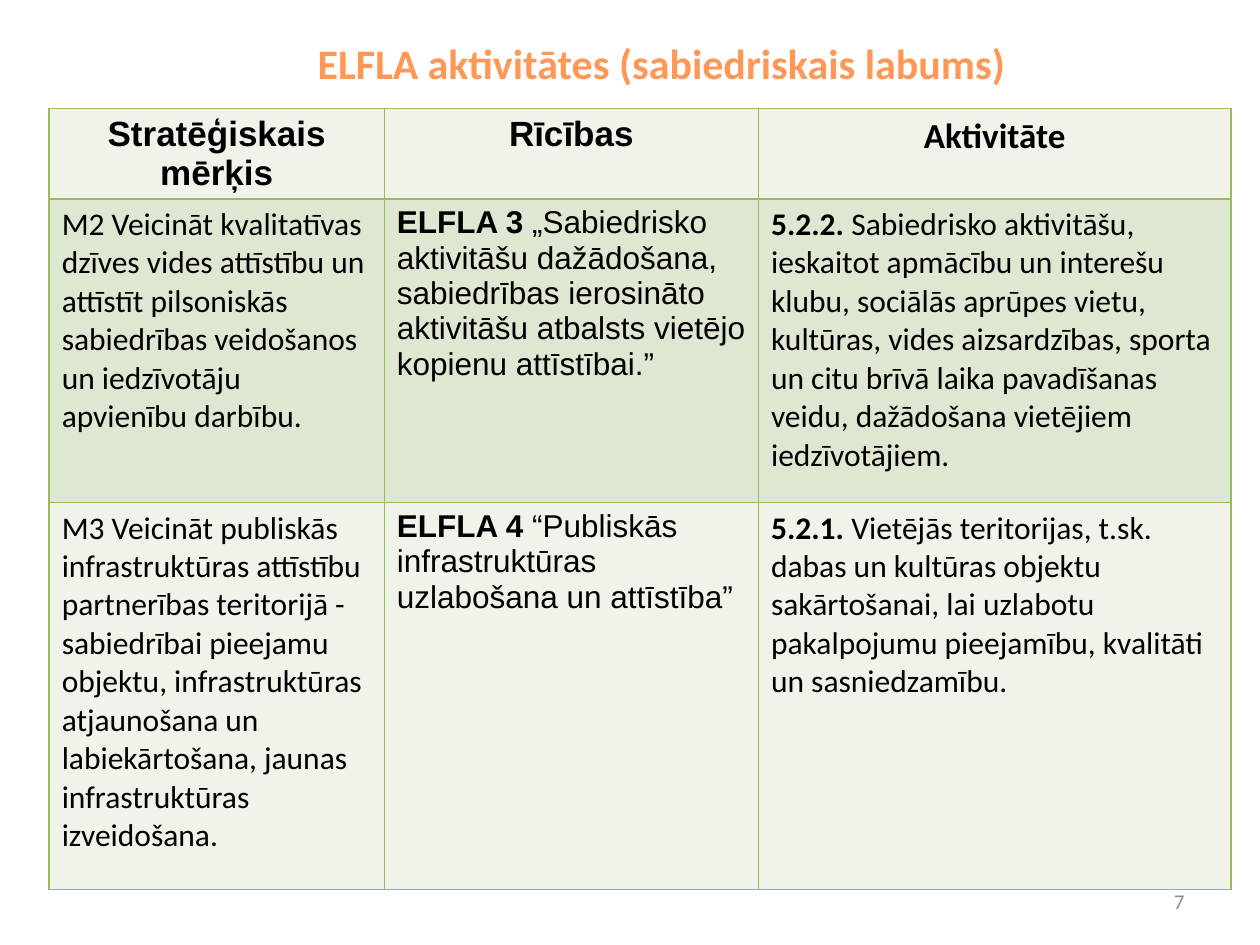
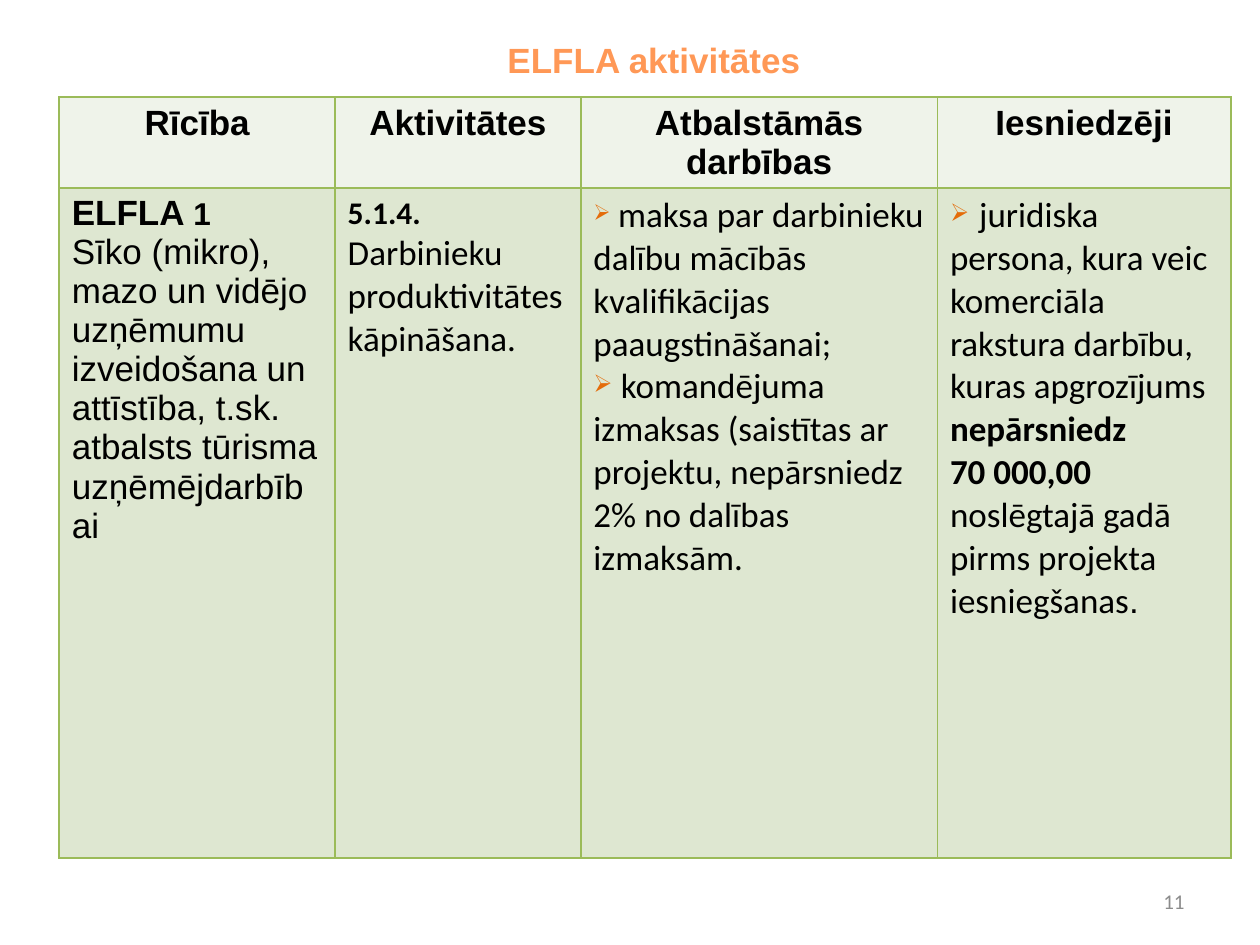
from lxml import etree
from pptx import Presentation
from pptx.dml.color import RGBColor
from pptx.enum.text import MSO_ANCHOR, PP_ALIGN
from pptx.oxml.ns import qn
from pptx.util import Inches, Pt

CENTER, RIGHT, MIDDLE = PP_ALIGN.CENTER, PP_ALIGN.RIGHT, MSO_ANCHOR.MIDDLE
ORANGE = RGBColor(0xFF, 0x98, 0x56)
BULLET = RGBColor(0xE4, 0x6C, 0x0A)
GREEN = RGBColor(0x9B, 0xBB, 0x59)
PALE = RGBColor(0xEF, 0xF3, 0xEA)
SAGE = RGBColor(0xDE, 0xE7, 0xD1)
BLACK = RGBColor(0, 0, 0)
GREY = RGBColor(0x8C, 0x8C, 0x8C)
A, C = "Arial", "Calibri"
TITLE_ONLY = 5

prs = Presentation()
prs.slide_width, prs.slide_height = Inches(10), Inches(7.5)
PX, PY = prs.slide_width / 100, prs.slide_height / 100  # one percent of the slide


def add_run(p, text, size, font, bold=False, color=BLACK):
    r = p.add_run()
    r.text = text
    r.font.size, r.font.name, r.font.bold = Pt(size), font, bold
    r.font.color.rgb = color


def add_bullet(p):
    """Put an orange arrow in front of the paragraph, without a hanging indent."""
    pPr = p._p.get_or_add_pPr()
    pPr.set("marL", "0")
    pPr.set("indent", "0")
    clr = etree.SubElement(pPr, qn("a:buClr"))
    etree.SubElement(clr, qn("a:srgbClr"), val=str(BULLET))
    etree.SubElement(pPr, qn("a:buSzPct"), val="70000")
    etree.SubElement(pPr, qn("a:buChar"), char="➢")


# Boxes, columns and rows are in percent of the slide.
# A cell is a list of paragraphs, a paragraph a list of runs (text, size, font, bold);
# a paragraph that starts with "➢" is bulleted.
slides = [
    {
        "title": ("ELFLA aktivitātes (sabiedriskais labums)", 24, C),
        "title_box": (10, 4, 85, 5.33),
        "number": "7",
        "corner": (3.9, 11.47),
        "cols": [26.6, 29.7, 37.5],
        "rows": [7.2, 32.13, 40.93],
        "header": [("Stratēģiskais mērķis", A), ("Rīcības", A), ("Aktivitāte", C)],
        "body": [
            [
                [[("M2 Veicināt kvalitatīvas dzīves vides attīstību un attīstīt pilsoniskās "
                   "sabiedrības veidošanos un iedzīvotāju apvienību darbību.", 18, C)]],
                [[("ELFLA 3 ", 18, A, True),
                  ("„Sabiedrisko aktivitāšu dažādošana, sabiedrības ierosināto aktivitāšu "
                   "atbalsts vietējo kopienu attīstībai.”", 18, A)]],
                [[("5.2.2. ", 18, C, True),
                  ("Sabiedrisko aktivitāšu, ieskaitot apmācību un interešu klubu, sociālās "
                   "aprūpes vietu, kultūras, vides aizsardzības, sporta un citu brīvā laika "
                   "pavadīšanas veidu, dažādošana vietējiem iedzīvotājiem.", 18, C)]],
            ],
            [
                [[("M3 Veicināt publiskās infrastruktūras attīstību partnerības teritorijā - "
                   "sabiedrībai pieejamu objektu, infrastruktūras atjaunošana un "
                   "labiekārtošana, jaunas infrastruktūras izveidošana.", 18, C)]],
                [[("ELFLA 4 ", 18, A, True),
                  ("“Publiskās infrastruktūras uzlabošana un attīstība”", 18, A)]],
                [[("5.2.1. ", 18, C, True),
                  ("Vietējās teritorijas, t.sk. dabas un kultūras objektu sakārtošanai, lai "
                   "uzlabotu pakalpojumu pieejamību, kvalitāti un sasniedzamību.", 18, C)]],
            ],
        ],
    },
    {
        "title": ("ELFLA aktivitātes", 20, A),
        "title_box": (9.4, 2.13, 85, 8.4),
        "number": "11",
        "corner": (4.7, 10.27),
        "cols": [21.9, 19.5, 28.3, 23.3],
        "rows": [9.33, 70.93],
        "header": [("Rīcība", A), ("Aktivitātes", A), ("Atbalstāmās darbības", A),
                   ("Iesniedzēji", A)],
        "body": [
            [
                [[("ELFLA ", 20, A, True), ("1", 18, A, True)],
                 [("Sīko (mikro), mazo un vidējo uzņēmumu izveidošana un attīstība, t.sk. "
                   "atbalsts tūrisma uzņēmējdarbībai", 20, A)]],
                [[("5.1.4. ", 18, C, True),
                  ("Darbinieku produktivitātes kāpināšana.", 20, C)]],
                [["➢", (" ", 18, C),
                  ("maksa par darbinieku dalību mācībās kvalifikācijas paaugstināšanai;", 20, C)],
                 ["➢", (" komandējuma izmaksas (saistītas ar projektu, nepārsniedz 2% no "
                        "dalības izmaksām.", 20, C)]],
                [["➢", (" ", 20, A),
                  ("juridiska persona, kura veic komerciāla rakstura darbību, kuras "
                   "apgrozījums ", 20, C),
                  ("nepārsniedz", 20, C, True)],
                 [("70 000,00 ", 20, C, True),
                  ("noslēgtajā gadā pirms projekta iesniegšanas", 20, C),
                  (".", 20, A)]],
            ],
        ],
    },
]

for data in slides:
    s = prs.slides.add_slide(prs.slide_layouts[TITLE_ONLY])

    title = s.shapes.title
    x, y, w, h = data["title_box"]
    title.left, title.top = int(x * PX), int(y * PY)
    title.width, title.height = int(w * PX), int(h * PY)
    tf = title.text_frame
    tf.vertical_anchor = MIDDLE
    p = tf.paragraphs[0]
    p.alignment = CENTER
    add_run(p, *data["title"], bold=True, color=ORANGE)

    cols, rows = data["cols"], data["rows"]
    x, y = data["corner"]
    table = s.shapes.add_table(len(rows), len(cols), int(x * PX), int(y * PY),
                               int(sum(cols) * PX), int(sum(rows) * PY)).table
    table.first_row = table.horz_banding = False
    for column, share in zip(table.columns, cols):
        column.width = int(share * PX)
    for row, share in zip(table.rows, rows):
        row.height = int(share * PY)

    header = [[[(text, 20, font, True)]] for text, font in data["header"]]
    for i, row in enumerate([header] + data["body"]):
        for j, paragraphs in enumerate(row):
            cell = table.cell(i, j)
            tcPr = cell._tc.get_or_add_tcPr()
            for side in ("lnL", "lnR", "lnT", "lnB"):
                ln = etree.SubElement(tcPr, qn(f"a:{side}"), w=str(Pt(1)))
                fill = etree.SubElement(ln, qn("a:solidFill"))
                etree.SubElement(fill, qn("a:srgbClr"), val=str(GREEN))
            cell.fill.solid()
            cell.fill.fore_color.rgb = SAGE if i % 2 else PALE
            tf = cell.text_frame
            for k, runs in enumerate(paragraphs):
                p = tf.add_paragraph() if k else tf.paragraphs[0]
                if i == 0:
                    p.alignment = CENTER
                if runs[0] == "➢":
                    add_bullet(p)
                    runs = runs[1:]
                for run in runs:
                    add_run(p, *run)

    sp = s.shapes.add_textbox(int(71.7 * PX), int(92.67 * PY), int(23.3 * PX), int(5.33 * PY))
    tf = sp.text_frame
    tf.word_wrap = True
    tf.vertical_anchor = MIDDLE
    p = tf.paragraphs[0]
    p.alignment = RIGHT
    add_run(p, data["number"], 12, C, color=GREY)

prs.save("out.pptx")
